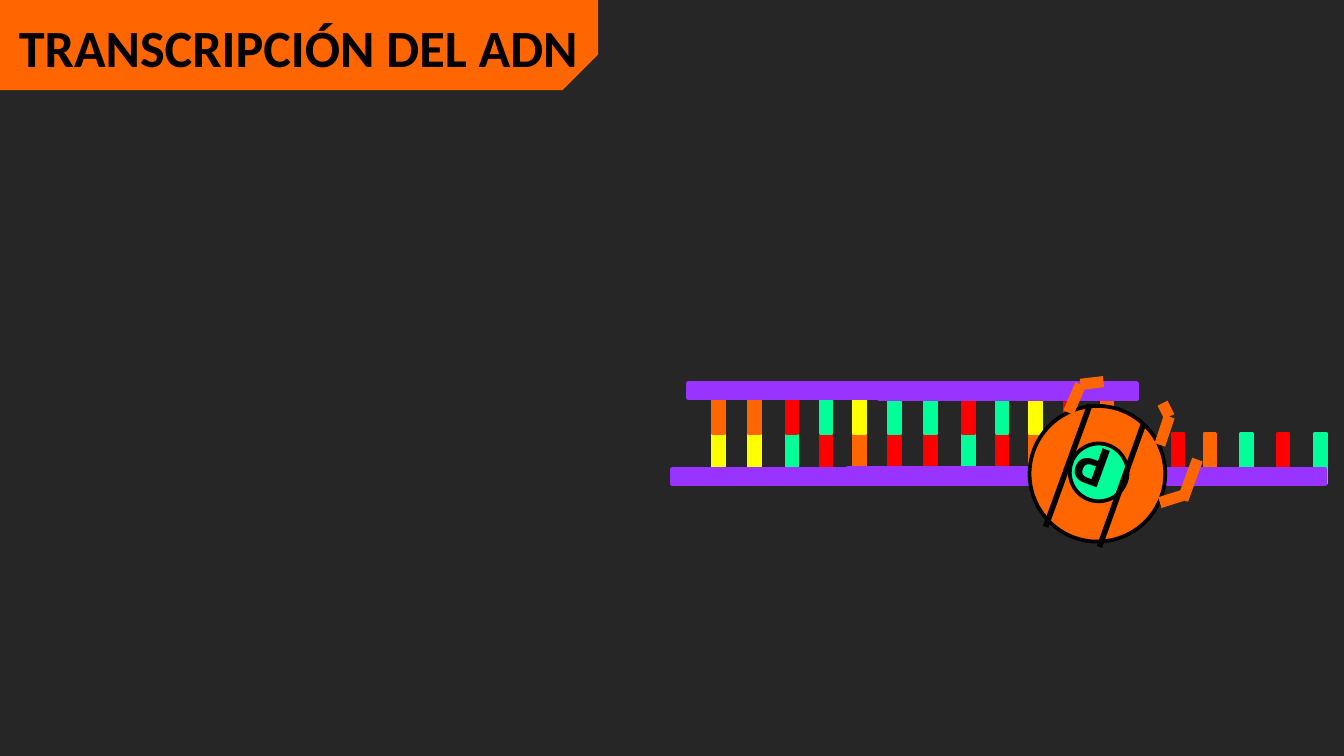
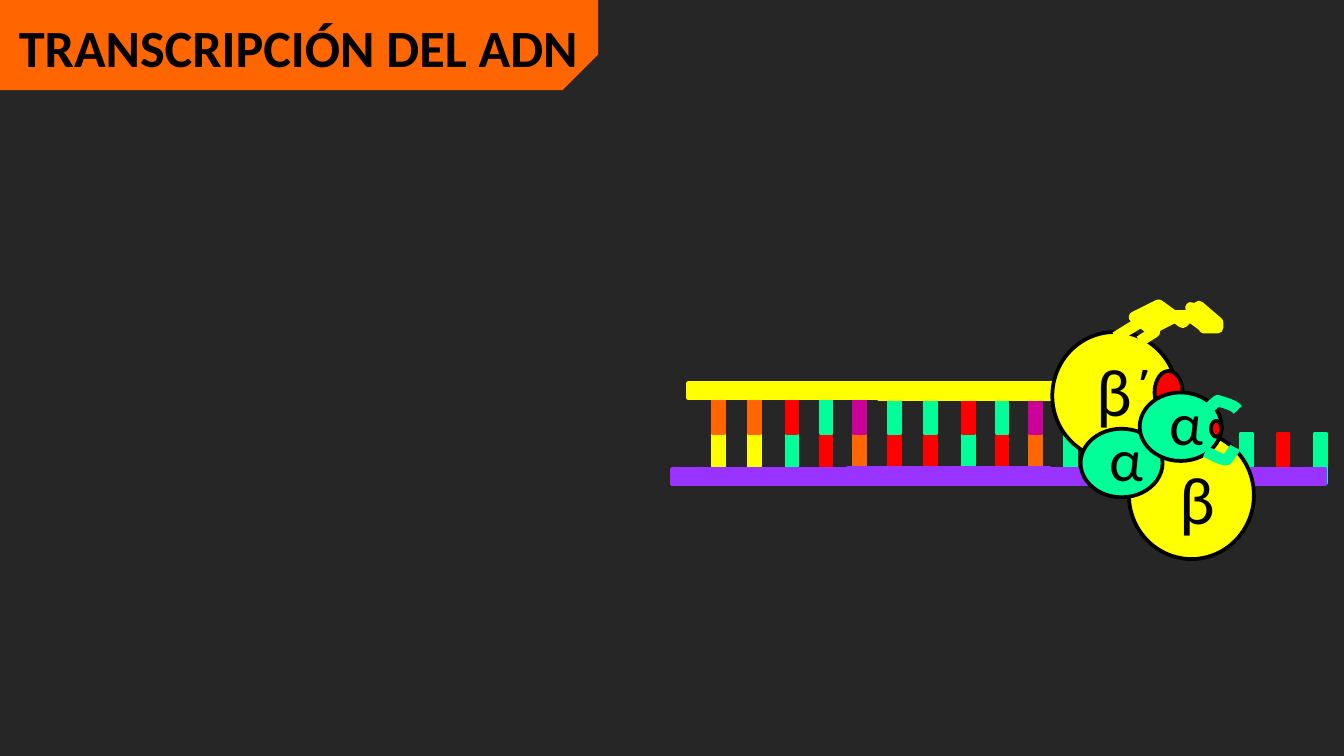
from dataclasses import dataclass
from typing import Any, NamedTuple, Optional

from lxml import etree
from pptx import Presentation, util as u
from pptx.dml.color import RGBColor
from pptx.enum import shapes, text
from pptx.oxml import ns

Inches = u.Inches
Pt = u.Pt


@dataclass(frozen=True)
class Theme:
    font: str = "Calibri"
    background: RGBColor = RGBColor(0x26, 0x26, 0x26)
    black: RGBColor = RGBColor(0, 0, 0)
    orange: RGBColor = RGBColor(0xFF, 0x66, 0x00)
    green: RGBColor = RGBColor(0x00, 0xFF, 0x99)
    yellow: RGBColor = RGBColor(0xFF, 0xFF, 0x00)
    red: RGBColor = RGBColor(0xFF, 0x00, 0x00)
    purple: RGBColor = RGBColor(0x99, 0x33, 0xFF)
    magenta: RGBColor = RGBColor(0xCC, 0x00, 0x99)
    title_size: int = 28
    alpha_size: int = 32
    beta_size: int = 36
    outline: int = 2
    stripe: int = 3
    limb: int = 6


THEME = Theme()
TITLE = "TRANSCRIPCIÓN DEL ADN"
BASE_COLOURS = {"A": THEME.orange, "T": THEME.yellow, "U": THEME.magenta,
                "C": THEME.green, "G": THEME.red}
BASE_LEFTS = (5.16, 5.43, 5.71, 5.96, 6.21, 6.47, 6.74, 7.02, 7.27,
              7.52, 7.78, 8.05, 8.33, 8.58, 8.82, 9.09, 9.36, 9.64)
TEMPLATE_BASES = "TTCGAGGCGACTCGACGC"
CODING_BASES = "AAGCTCCGCTGA"


class Box(NamedTuple):
    left: float
    top: float
    width: float
    height: float

    def lengths(self) -> tuple:
        return tuple(Inches(value) for value in self)


class Point(NamedTuple):
    x: float
    y: float


class Segment(NamedTuple):
    start: Point
    end: Point
    colour: RGBColor
    weight: int


class Ball(NamedTuple):
    box: Box
    fill: RGBColor


class Label(NamedTuple):
    box: Box
    wording: str
    size: int


class Outline(NamedTuple):
    points: list[Point]
    colour: RGBColor
    filled: bool


TEMPLATE_STRAND = (Box(6.31, 3.48, 1.5, 0.12), Box(5, 3.49, 1.55, 0.11),
                   Box(7.68, 3.49, 2.18, 0.11))
CODING_STRAND = (Box(6.54, 2.85, 1.92, 0.12), Box(5.12, 2.85, 1.63, 0.11))


def add_run(paragraph: Any, wording: str, size: int, bold: bool = False) -> None:
    run = paragraph.add_run()
    run.text = wording
    run.font.name = THEME.font
    run.font.size = Pt(size)
    run.font.bold = bold
    run.font.color.rgb = THEME.black


def paint(shape: Any, fill: Optional[RGBColor], line: Optional[RGBColor],
          weight: int = THEME.outline) -> None:
    shape.shadow.inherit = False
    if fill is None:
        shape.fill.background()
    else:
        shape.fill.solid()
        shape.fill.fore_color.rgb = fill
    if line is None:
        shape.line.fill.background()
    else:
        shape.line.color.rgb = line
        shape.line.width = Pt(weight)


def add_preset(group: Any, preset: Any, box: Box, fill: RGBColor,
               line: Optional[RGBColor], rotation: float = 0) -> Any:
    shape = group.shapes.add_shape(preset, *box.lengths())
    shape.rotation = rotation
    paint(shape, fill, line)
    return shape


def add_ball(group: Any, ball: Ball, rotation: float = 0) -> Any:
    return add_preset(group, shapes.MSO_SHAPE.OVAL, ball.box, ball.fill,
                      THEME.black, rotation)


def add_segment(group: Any, segment: Segment) -> None:
    connector = group.shapes.add_connector(
        shapes.MSO_CONNECTOR.STRAIGHT,
        Inches(segment.start.x), Inches(segment.start.y),
        Inches(segment.end.x), Inches(segment.end.y))
    connector.line.color.rgb = segment.colour
    connector.line.width = Pt(segment.weight)
    etree.SubElement(connector.element.spPr, ns.qn("a:effectLst"))


def add_label(group: Any, label: Label) -> None:
    textbox = group.shapes.add_textbox(*label.box.lengths())
    frame = textbox.text_frame
    frame.word_wrap = True
    frame.auto_size = text.MSO_AUTO_SIZE.SHAPE_TO_FIT_TEXT
    add_run(frame.paragraphs[0], label.wording, label.size)


def add_outline(group: Any, outline: Outline) -> None:
    corners = [(Inches(point.x), Inches(point.y)) for point in outline.points]
    builder = group.shapes.build_freeform(*corners[0])
    builder.add_line_segments(corners[1:], close=False)
    paint(builder.convert_to_shape(), outline.colour if outline.filled else None,
          outline.colour, THEME.limb)


def curve(a: Point, b: Point, c: Point, d: Point, steps: int = 8) -> list[Point]:
    def blend(t: float, values: tuple) -> float:
        weights = ((1 - t) ** 3, 3 * t * (1 - t) ** 2, 3 * t * t * (1 - t), t ** 3)
        return sum(weight * value for weight, value in zip(weights, values))

    return [Point(*(blend(i / steps, axis) for axis in zip(a, b, c, d)))
            for i in range(1, steps + 1)]


def add_bases(group: Any, bases: str, top: float) -> None:
    for left, base in zip(BASE_LEFTS, bases):
        colour = BASE_COLOURS[base]
        add_preset(group, shapes.MSO_SHAPE.RECTANGLE, Box(left, top, 0.37, 0.08),
                   colour, colour, 270)


def add_strand(group: Any, boxes: tuple, colour: RGBColor) -> None:
    for box in boxes:
        add_preset(group, shapes.MSO_SHAPE.RECTANGLE, box, colour, colour)


def add_double_strand(slide: Any, bases: str, colour: RGBColor) -> None:
    group = slide.shapes.add_group_shape()
    add_bases(group, TEMPLATE_BASES, 3.37)
    add_strand(group, TEMPLATE_STRAND, THEME.purple)
    add_bases(group, bases, 3)
    add_strand(group, CODING_STRAND, colour)


def add_titled_slide(presentation: Any) -> Any:
    slide = presentation.slides.add_slide(presentation.slide_layouts[5])
    band = add_preset(slide, shapes.MSO_SHAPE.SNIP_1_RECTANGLE,
                      Box(0, 0, 4.45, 0.67), THEME.orange, None, 180)
    band.adjustments[0] = 0.395
    band.element.spPr.find(ns.qn("a:xfrm")).set("flipH", "1")
    title = slide.shapes.title
    title.element.addprevious(band.element)
    title.left, title.top, title.width, title.height = Box(0.04, 0.06, 4.41, 0.57).lengths()
    frame = title.text_frame
    frame.word_wrap = False
    frame.auto_size = text.MSO_AUTO_SIZE.SHAPE_TO_FIT_TEXT
    frame.vertical_anchor = text.MSO_ANCHOR.TOP
    paragraph = frame.paragraphs[0]
    paragraph.alignment = text.PP_ALIGN.LEFT
    add_run(paragraph, TITLE, THEME.title_size, bold=True)
    return slide


def add_primase(slide: Any) -> None:
    group = slide.shapes.add_group_shape()
    tilt = 199.9
    add_ball(group, Ball(Box(7.66, 3.02, 1.01, 1.01), THEME.orange), tilt)
    core = add_ball(group, Ball(Box(7.96, 3.3, 0.43, 0.43), THEME.green), tilt)
    core.text_frame.vertical_anchor = text.MSO_ANCHOR.MIDDLE
    paragraph = core.text_frame.paragraphs[0]
    paragraph.alignment = text.PP_ALIGN.CENTER
    add_run(paragraph, "P", THEME.alpha_size, bold=True)
    stripes = ((8.18, 4.07, 8.51, 3.15), (7.78, 3.92, 8.11, 3.01))
    limbs = ((8.63, 3.31, 8.7, 3.1), (8.63, 3.74, 8.82, 3.68),
             (8.8, 3.72, 8.91, 3.42), (7.95, 3.07, 8.04, 2.86),
             (8.04, 2.86, 8.21, 2.84), (8.7, 3.1, 8.65, 3))
    for ends, colour, weight in ((stripes, THEME.black, THEME.stripe),
                                 (limbs, THEME.orange, THEME.limb)):
        for x1, y1, x2, y2 in ends:
            add_segment(group, Segment(Point(x1, y1), Point(x2, y2), colour, weight))


def add_polymerase(slide: Any) -> None:
    elbow = Point(8.56, 2.35)
    claw = [Point(*pair) for pair in (
        (8.48, 2.54), (8.59, 2.47), (8.44, 2.36), (8.62, 2.27), (8.8, 2.4),
        (8.92, 2.28), (9.06, 2.4), (9.06, 2.44), (8.96, 2.44), (8.97, 2.35),
        (8.86, 2.29), (8.9, 2.36), (8.99, 2.4), (8.97, 2.44), (8.85, 2.35))]
    upper_bend = Point(9.06, 2.98)
    upper_jaw = [Point(8.93, 3.09), upper_bend] + curve(
        upper_bend, Point(9.11, 3), Point(9.18, 3.01), Point(9.21, 3.05))
    lower_start, lower_bend = Point(8.97, 3.36), Point(9.13, 3.42)
    lower_jaw = [lower_start] + curve(
        lower_start, Point(9.03, 3.39), Point(9.1, 3.43), lower_bend) + curve(
        lower_bend, Point(9.15, 3.39), Point(9.18, 3.35), Point(9.19, 3.33))
    parts = (
        Ball(Box(8.4, 3.21, 0.93, 0.95), THEME.yellow),
        Ball(Box(7.83, 2.47, 0.93, 0.95), THEME.yellow),
        Ball(Box(8.04, 3.19, 0.61, 0.51), THEME.green),
        Label(Box(8.16, 3.09, 0.32, 0.64), "α", THEME.alpha_size),
        Segment(Point(8.3, 2.51), elbow, THEME.yellow, THEME.limb),
        Segment(elbow, Point(8.85, 2.35), THEME.yellow, THEME.limb),
        Label(Box(8.06, 2.55, 0.69, 0.71), "β´", THEME.beta_size),
        Ball(Box(8.59, 2.76, 0.21, 0.32), THEME.red),
        Outline(claw, THEME.yellow, True),
        Label(Box(8.68, 3.35, 0.32, 0.71), "β", THEME.beta_size),
        Ball(Box(8.48, 2.92, 0.61, 0.51), THEME.green),
        Label(Box(8.6, 2.82, 0.32, 0.64), "α", THEME.alpha_size),
        Outline(upper_jaw, THEME.green, False),
        Ball(Box(9.01, 3.13, 0.08, 0.12), THEME.red),
        Outline(lower_jaw, THEME.green, False),
    )
    draw = {Ball: add_ball, Label: add_label, Segment: add_segment, Outline: add_outline}
    group = slide.shapes.add_group_shape()
    for part in parts:
        draw[type(part)](group, part)


def main() -> None:
    presentation = Presentation()
    presentation.slide_width = Inches(10)
    presentation.slide_height = Inches(10 * 9 / 16)
    background = presentation.slide_master.background.fill
    background.solid()
    background.fore_color.rgb = THEME.background

    primase_slide = add_titled_slide(presentation)
    add_double_strand(primase_slide, CODING_BASES, THEME.purple)
    add_primase(primase_slide)

    polymerase_slide = add_titled_slide(presentation)
    add_double_strand(polymerase_slide, CODING_BASES.replace("T", "U"), THEME.yellow)
    add_polymerase(polymerase_slide)

    presentation.save("out.pptx")


if __name__ == "__main__":
    main()
